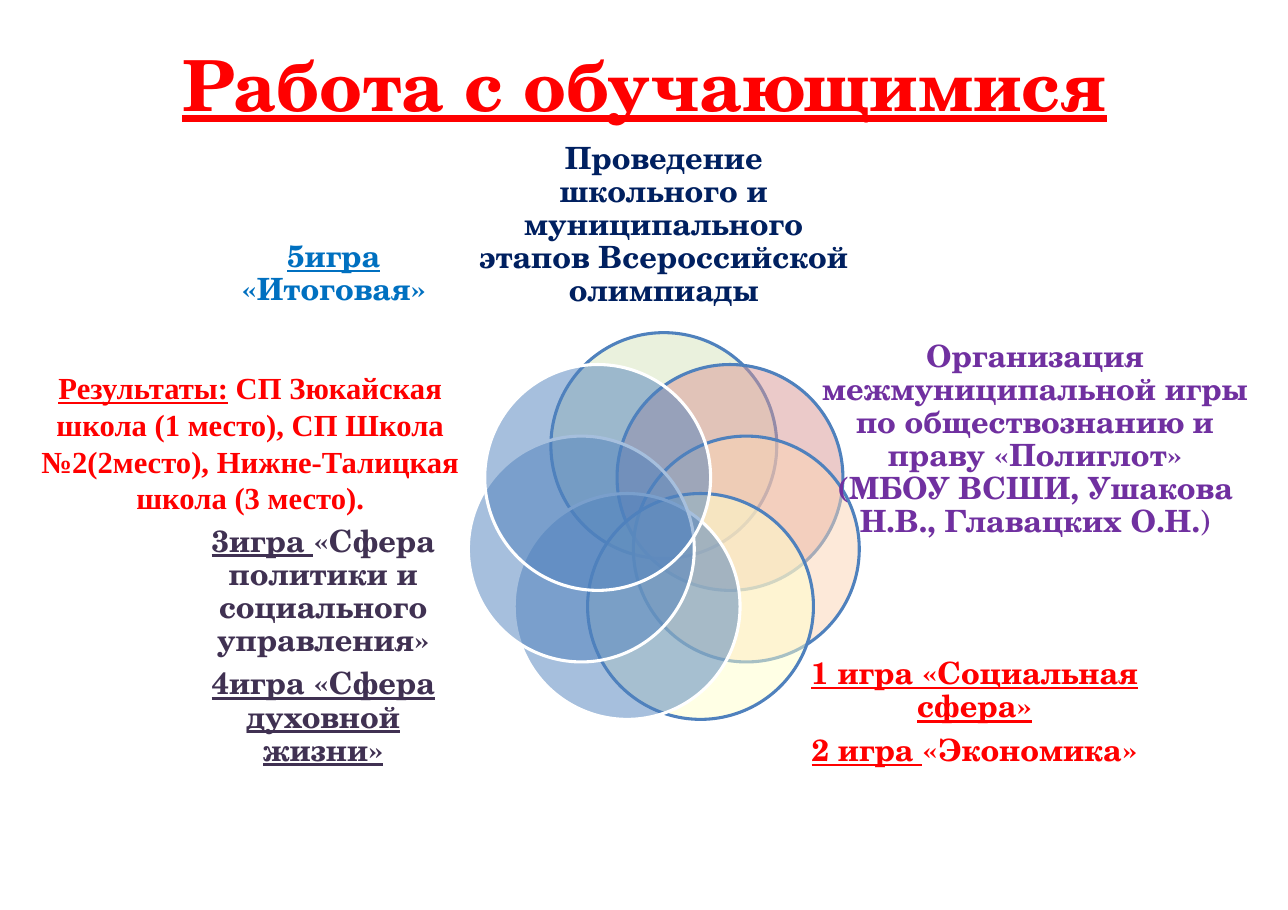
from math import cos, pi, sin

from lxml.etree import SubElement
from pptx import Presentation
from pptx.dml.color import RGBColor
from pptx.enum.shapes import MSO_SHAPE as Shape
from pptx.enum.text import MSO_ANCHOR as Anchor, MSO_AUTO_SIZE as AutoSize, PP_ALIGN as Align
from pptx.oxml.ns import qn
from pptx.util import Pt

COLORS = {
    "red": "FF0000", "navy": "002060", "purple": "7030A0", "plum": "403152",
    "sky": "0070C0", "blue": "4F81BD", "white": "FFFFFF", "green": "D7E4BD",
    "rose": "D99694", "peach": "FCD5B5", "cream": "FFFFCC",
}
SERIF, TIMES = "TeX Gyre Schola", "Times New Roman"
BOLD, UNDERLINED, PLAIN = (True, False), (True, True), (False, False)

TITLE = "Работа с обучающимися"
# Petals clockwise from the top: fill, outline
PETALS = [
    ("green", "blue"), ("rose", "blue"), ("peach", "blue"), ("cream", "blue"),
    ("blue", "white"), ("blue", "white"), ("blue", "white"),
]
# Labels: position and size, colour, space after, paragraphs of (text, style) runs
LABELS = [
    ((312.5, 85, 242.6, 125.3), "navy", 7, [
        [("Проведение школьного и муниципального этапов Всероссийской олимпиады", BOLD)],
    ]),
    ((534.2, 189.4, 284.4, 196.6), "purple", 0, [
        [("Организация межмуниципальной игры по обществознанию и праву «Полиглот»", BOLD)],
        [("(МБОУ ВСШИ, Ушакова Н.В., Главацких О.Н.", BOLD), (")", PLAIN)],
    ]),
    ((514.1, 417.6, 245.5, 97.2), "red", 7, [
        [("1 игра «Социальная сфера»", UNDERLINED)],
        [("2 игра ", UNDERLINED), ("«Экономика»", BOLD)],
    ]),
    ((134.6, 331.9, 153.4, 181.4), "plum", 7, [
        [("3игра ", UNDERLINED), ("«Сфера политики и социального управления»", BOLD)],
        [("4игра «Сфера духовной жизни»", UNDERLINED)],
    ]),
    ((138.2, 129.6, 159.8, 99.4), "sky", 7, [
        [("5игра", UNDERLINED), (" «Итоговая»", BOLD)],
    ]),
]
RESULTS_BOX = (13, 237.6, 301, 104.4)
RESULTS = [
    [("Результаты:", UNDERLINED),
     (" СП Зюкайская школа (1 место), СП Школа №2(2место), Нижне-Талицкая школа (3 место).", BOLD)],
]
CENTER_X, CENTER_Y = 433.8, 346.5
RING_RADIUS, PETAL_SIZE = 55.3, 147.6


def rgb(name):
    return RGBColor.from_string(COLORS[name])


def clear_insets(text_frame):
    text_frame.margin_left = text_frame.margin_right = 0
    text_frame.margin_top = text_frame.margin_bottom = 0
    text_frame.vertical_anchor = Anchor.MIDDLE


def style_font(font, name, size, color, style):
    font.name, font.size = name, Pt(size)
    font.color.rgb = rgb(color)
    font.bold, font.underline = style


def add_title(slide):
    title = slide.shapes.title
    title.left, title.top, title.width, title.height = map(Pt, (43.2, 0, 756, 108.7))
    text_frame = title.text_frame
    text_frame.text = TITLE
    text_frame.word_wrap = True
    text_frame.auto_size = AutoSize.NONE
    clear_insets(text_frame)
    paragraph = text_frame.paragraphs[0]
    paragraph.alignment = Align.CENTER
    style_font(paragraph.runs[0].font, SERIF, 46, "red", UNDERLINED)


def add_petals(slide):
    """Place translucent circles evenly around a ring."""
    for index, (fill, outline) in enumerate(PETALS):
        angle = 2 * pi * index / len(PETALS)
        left = CENTER_X + RING_RADIUS * sin(angle) - PETAL_SIZE / 2
        top = CENTER_Y - RING_RADIUS * cos(angle) - PETAL_SIZE / 2
        petal = slide.shapes.add_shape(
            Shape.OVAL, Pt(left), Pt(top), Pt(PETAL_SIZE), Pt(PETAL_SIZE))
        petal.shadow.inherit = False
        petal.fill.solid()
        petal.fill.fore_color.rgb = rgb(fill)
        color = petal.fill._xPr.find(qn("a:solidFill"))[0]
        SubElement(color, qn("a:alpha")).set("val", "50000")
        petal.line.color.rgb = rgb(outline)
        petal.line.width = Pt(2)


def add_text(slide, box, paragraphs, font_name, color, line_spacing=1.0, space_after=0):
    text_frame = slide.shapes.add_textbox(*map(Pt, box)).text_frame
    text_frame.word_wrap = True
    for index, runs in enumerate(paragraphs):
        paragraph = text_frame.add_paragraph() if index else text_frame.paragraphs[0]
        paragraph.alignment = Align.CENTER
        paragraph.line_spacing = line_spacing
        paragraph.space_after = Pt(space_after)
        for text, style in runs:
            run = paragraph.add_run()
            run.text = text
            style_font(run.font, font_name, 20, color, style)
    return text_frame


def main():
    presentation = Presentation()
    presentation.slide_width, presentation.slide_height = Pt(841.7), Pt(594.7)
    slide = presentation.slides.add_slide(presentation.slide_layouts[5])
    add_title(slide)
    add_petals(slide)
    for box, color, space_after, paragraphs in LABELS:
        clear_insets(add_text(slide, box, paragraphs, SERIF, color, 0.9, space_after))
    results = add_text(slide, RESULTS_BOX, RESULTS, TIMES, "red")
    results.auto_size = AutoSize.SHAPE_TO_FIT_TEXT
    presentation.save("out.pptx")


if __name__ == "__main__":
    main()
